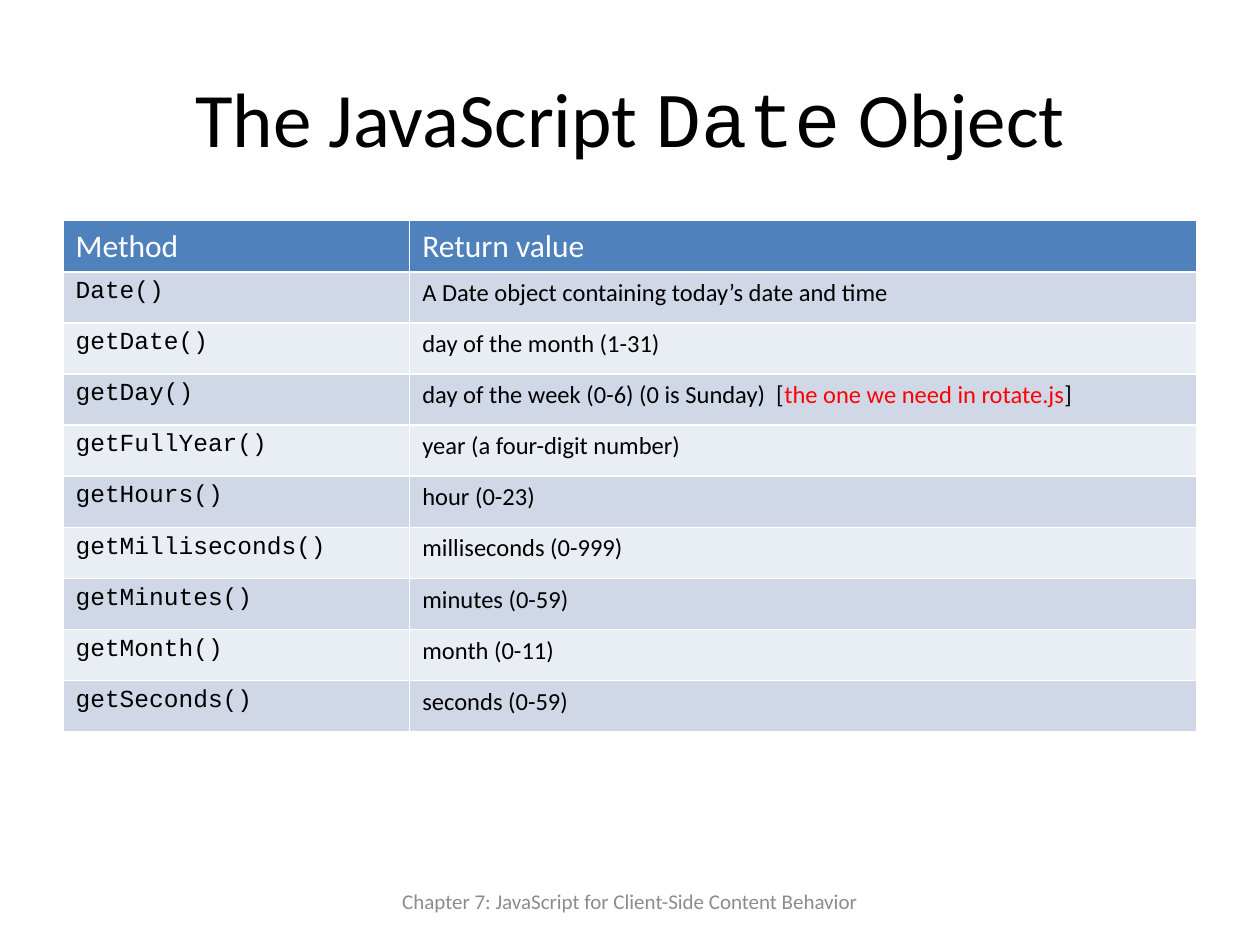
import pptx
import pptx.dml.color
import pptx.enum.text
import pptx.util

Cm = pptx.util.Cm

TITLE = [("The JavaScript ", "title"), ("Date", "title_code"), (" Object", "title")]
HEADINGS = ("Method", "Return value")
METHODS = [
    ("Date()", "A Date object containing today’s date and time"),
    ("getDate()", "day of the month (1-31)"),
    ("getDay()", [
        ("day of the week (0-6) (0 is Sunday)  [", "body"),
        ("the one we need in rotate.js", "highlight"),
        ("]", "body"),
    ]),
    ("getFullYear()", "year (a four-digit number)"),
    ("getHours()", "hour (0-23)"),
    ("getMilliseconds()", "milliseconds (0-999)"),
    ("getMinutes()", "minutes (0-59)"),
    ("getMonth()", "month (0-11)"),
    ("getSeconds()", "seconds (0-59)"),
]
FOOTER = [("Chapter 7: JavaScript for Client-Side Content Behavior", "footer")]

THEME = {
    "fills": {"header": "4F81BD", "bands": ("D0D8E8", "E9EDF4")},
    "text": {
        "title": ("Calibri", 44, "000000"),
        "title_code": ("Courier New", 44, "000000"),
        "header": ("Calibri", 18, "FFFFFF"),
        "code": ("Courier New", 14, "000000"),
        "body": ("Calibri", 14, "000000"),
        "highlight": ("Calibri", 14, "FF0000"),
        "footer": ("Calibri", 12, "8C8C8C"),
    },
}

SLIDE_SIZE = (25.4, 19.05)
TITLE_BOX = (1.27, 0.76, 22.86, 3.18)
FOOTER_BOX = (7.2, 17.65, 11, 1.02)
TABLE_ORIGIN = (1.27, 4.45)
COLUMN_WIDTHS = (6.99, 15.87)
ROW_HEIGHT = 1.03


def rgb(value):
    return pptx.dml.color.RGBColor.from_string(value)


def write_runs(paragraph, runs):
    for text, style in runs:
        run = paragraph.add_run()
        run.text = text
        name, size, color = THEME["text"][style]
        font_format = {"name": name, "size": pptx.util.Pt(size), "bold": False}
        for attribute, value in font_format.items():
            setattr(run.font, attribute, value)
        run.font.color.rgb = rgb(color)


def add_centered_text(slide, box, runs):
    shape = slide.shapes.add_textbox(*map(Cm, box))
    frame_format = {
        "word_wrap": True,
        "vertical_anchor": pptx.enum.text.MSO_ANCHOR.MIDDLE,
    }
    for attribute, value in frame_format.items():
        setattr(shape.text_frame, attribute, value)
    paragraph = shape.text_frame.paragraphs[0]
    paragraph.alignment = pptx.enum.text.PP_ALIGN.CENTER
    write_runs(paragraph, runs)


def add_method_table(slide):
    rows = [HEADINGS, *METHODS]
    table = slide.shapes.add_table(
        len(rows), len(COLUMN_WIDTHS), *map(Cm, TABLE_ORIGIN),
        Cm(sum(COLUMN_WIDTHS)), Cm(ROW_HEIGHT * len(rows)),
    ).table
    for column, width in zip(table.columns, COLUMN_WIDTHS):
        column.width = Cm(width)
    for row_index, values in enumerate(rows):
        table.rows[row_index].height = Cm(ROW_HEIGHT)
        if row_index == 0:
            fill, styles = THEME["fills"]["header"], ("header", "header")
        else:
            fill = THEME["fills"]["bands"][(row_index - 1) % 2]
            styles = ("code", "body")
        for column_index, (value, style) in enumerate(zip(values, styles)):
            cell = table.cell(row_index, column_index)
            cell.fill.solid()
            cell.fill.fore_color.rgb = rgb(fill)
            runs = [(value, style)] if isinstance(value, str) else value
            write_runs(cell.text_frame.paragraphs[0], runs)


def main():
    presentation = pptx.Presentation()
    presentation.slide_width, presentation.slide_height = map(Cm, SLIDE_SIZE)
    slide = presentation.slides.add_slide(presentation.slide_layouts[6])
    add_centered_text(slide, TITLE_BOX, TITLE)
    add_method_table(slide)
    add_centered_text(slide, FOOTER_BOX, FOOTER)
    presentation.save("out.pptx")


if __name__ == "__main__":
    main()
